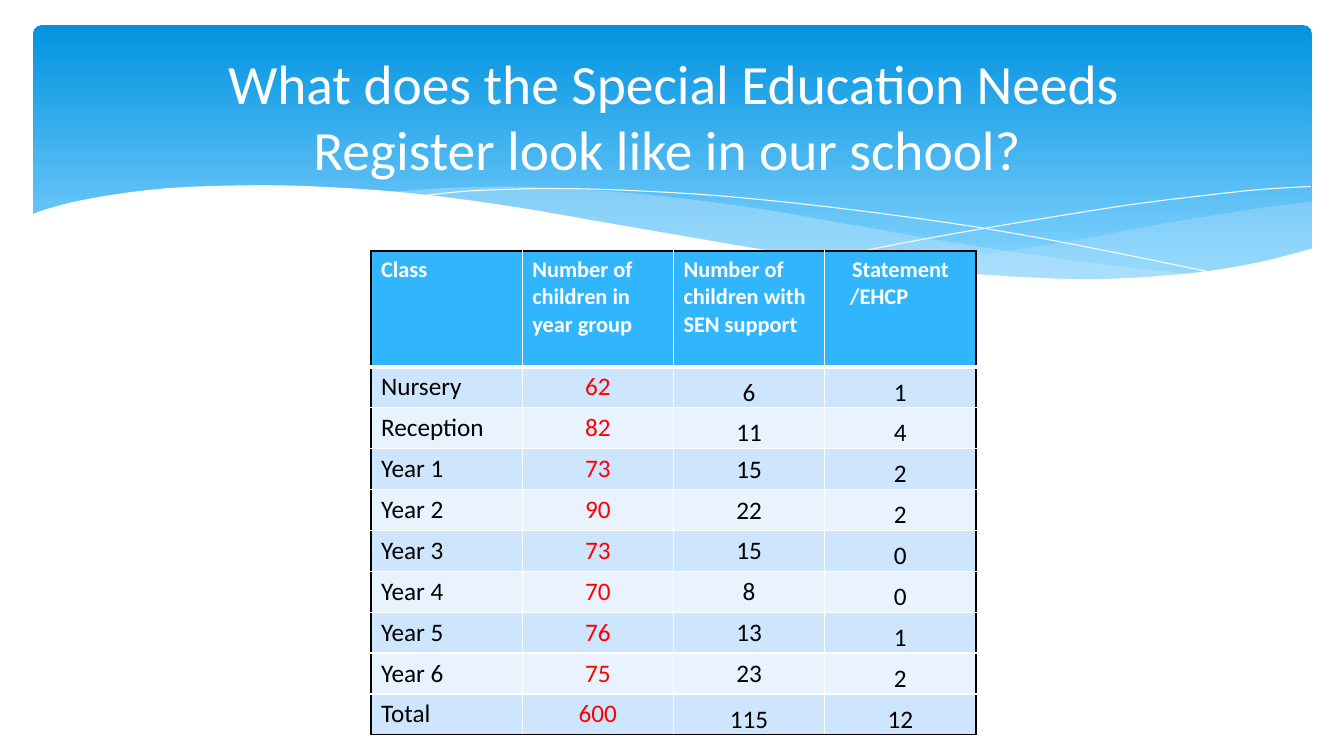
from lxml.etree import SubElement
from pptx import Presentation
from pptx.dml.color import RGBColor
from pptx.enum.shapes import MSO_SHAPE as Preset
from pptx.enum.text import MSO_ANCHOR as Anchor, MSO_AUTO_SIZE as AutoSize, PP_ALIGN as Align
from pptx.oxml.ns import qn
from pptx.util import Pt

PX = 9144
FONT = "Calibri"
WHITE, BLACK, RED = "FFFFFF", "000000", "FF0000"
HEADER_BLUE, MIST = "31B6FD", "C6E7FC"
BANDS = ["CEE5FE", "E8F3FF"]

TITLE = "What does the Special Education Needs Register look like in our school? "
HEADINGS = ["Class", "Number of children in year group\t",
            "Number of children with SEN support\t", "Statement /EHCP\t"]
CLASSES = [
    ("Nursery", 62, 6, 1),
    ("Reception", 82, 11, 4),
    ("Year 1", 73, 15, 2),
    ("Year 2", 90, 22, 2),
    ("Year 3", 73, 15, 0),
    ("Year 4", 70, 8, 0),
    ("Year 5", 76, 13, 1),
    ("Year 6", 75, 23, 2),
    ("Total", 600, 115, 12),
]

RIGHT_RIPPLE = [
    [(1268, 175), (1213, 182), (1155, 191), (1114, 198), (1040, 212), (972, 223),
     (908, 232), (849, 240)],
    [(849, 240), (907, 246), (960, 250), (1038, 253), (1105, 251), (1163, 245),
     (1214, 237), (1268, 222)],
]
LONG_RIPPLE = [
    [(1157, 248), (1083, 240), (1001, 229), (908, 215), (806, 197), (726, 183),
     (653, 173), (586, 166), (527, 162), (473, 160), (426, 161), (385, 163), (349, 166)],
    [(349, 166), (423, 174), (506, 186), (566, 197), (673, 215), (769, 230), (854, 241),
     (930, 249), (997, 252), (1057, 253), (1110, 252), (1157, 248)],
]
FALLING_LINE = [
    [(379, 170), (425, 165), (466, 163), (522, 162), (592, 164), (677, 169), (778, 179),
     (894, 194), (981, 208), (1075, 226), (1177, 247)],
]
RISING_LINE = [
    [(785, 232), (863, 216), (964, 198), (1082, 179), (1161, 169), (1217, 163), (1267, 160)],
]
FRONT_WAVE = [
    [(1270, 221), (1221, 234), (1165, 244), (1101, 250), (1045, 252), (982, 250),
     (911, 245), (830, 237), (739, 225), (638, 208), (563, 195), (488, 182), (420, 172),
     (357, 165), (300, 161), (249, 159), (202, 159), (143, 161), (94, 166), (46, 174),
     (15, 182), (-2, 188)],
    [(-2, 304), (1270, 304)],
]


def rgb(code):
    """Turn a hex string into a colour."""
    return RGBColor.from_string(code)


def emu(*lengths):
    """Turn lengths in px into EMU."""
    return [round(length * PX) for length in lengths]


def apply(target, values):
    """Set each named attribute of the target."""
    for name, value in values.items():
        setattr(target, name, value)


def write(frame, text, align, **font):
    """Put one formatted paragraph into a text frame."""
    para = frame.paragraphs[0]
    para.alignment = align
    run = para.add_run()
    run.text = text
    run.font.color.rgb = rgb(font.pop("color"))
    apply(run.font, {"name": FONT, **font})


def smooth(points, steps=4):
    """Sample a Catmull-Rom curve through the points."""
    if len(points) < 3:
        return points
    padded = [points[0], *points, points[-1]]
    curve = [points[0]]
    for a, b, c, d in zip(padded, padded[1:], padded[2:], padded[3:]):
        for step in range(1, steps + 1):
            t = step / steps
            curve.append(tuple(
                (2 * q + (r - p) * t + (2 * p - 5 * q + 4 * r - s) * t ** 2
                 + (3 * q - p - 3 * r + s) * t ** 3) / 2
                for p, q, r, s in zip(a, b, c, d)))
    return curve


def add_curve(page, box, edges, color, opacity=100, closed=True):
    """Draw smooth edges from the corner of the box, as an area or a hairline."""
    left, top = box[:2]
    points = [emu(left + x, top + y) for edge in edges for x, y in smooth(edge)]
    builder = page.shapes.build_freeform(*points[0])
    builder.add_line_segments(points[1:], close=closed)
    shape = builder.convert_to_shape()
    shape.shadow.inherit = False
    if not closed:
        shape.fill.background()
        shape.line.color.rgb = rgb(color)
        shape.line.width = Pt(0)
        return
    shape.line.fill.background()
    shape.fill.solid()
    shape.fill.fore_color.rgb = rgb(color)
    if opacity < 100:
        tint = shape.element.spPr.find(qn("a:solidFill"))[0]
        SubElement(tint, qn("a:alpha"), val=str(opacity * 1000))


def add_banner(page, box):
    """Draw the gradient panel with its ripples and front wave."""
    panel = page.shapes.add_shape(Preset.ROUNDED_RECTANGLE, *emu(*box))
    panel.adjustments[0] = 0.03
    panel.shadow.inherit = False
    panel.line.fill.background()
    panel.fill.gradient()
    panel.fill.gradient_angle = 270
    for stop, color, position in zip(panel.fill.gradient_stops, ("0293E0", "83D3FE"), (0, 0.9)):
        stop.color.rgb = rgb(color)
        stop.position = position
    add_curve(page, box, RIGHT_RIPPLE, MIST, opacity=29)
    add_curve(page, box, LONG_RIPPLE, MIST, opacity=40)
    add_curve(page, box, FALLING_LINE, WHITE, closed=False)
    add_curve(page, box, RISING_LINE, WHITE, closed=False)
    add_curve(page, box, FRONT_WAVE, WHITE)


def add_title(page, box):
    """Place the title above the banner."""
    title = page.shapes.title
    title.element.getparent().append(title.element)
    apply(title, dict(zip(("left", "top", "width", "height"), emu(*box))))
    apply(title.text_frame, {"word_wrap": True, "auto_size": AutoSize.NONE,
                             "vertical_anchor": Anchor.MIDDLE})
    write(title.text_frame, TITLE, Align.CENTER, size=Pt(39.6), color=WHITE)


def add_borders(cell, sides):
    """Draw the cell borders, given as side, colour and points."""
    props = cell._tc.get_or_add_tcPr()
    for side, color, points in sides:
        line = SubElement(props, qn(f"a:ln{side}"), w=str(Pt(points)))
        SubElement(SubElement(line, qn("a:solidFill")), qn("a:srgbClr"), val=color)


def format_cell(cell, text, row, column):
    """Write and style one cell of the register by its place."""
    header = row == 0
    last_row, last_column = len(CLASSES), len(HEADINGS) - 1
    add_borders(cell, [
        ("L", BLACK if column == 0 else WHITE, 1),
        ("R", BLACK if column == last_column else WHITE, 1),
        ("T", BLACK if header else WHITE, 3 if row == 1 else 1),
        ("B", BLACK if row == last_row else WHITE, 3 if header else 1),
    ])
    cell.fill.solid()
    cell.fill.fore_color.rgb = rgb(HEADER_BLUE if header else BANDS[(row - 1) % 2])
    if not header and column >= 2:
        centred = column == 2 and text_is_year(row)
        edge = emu(1)[0]
        apply(cell, {"margin_left": edge, "margin_top": edge, "margin_right": edge,
                     "margin_bottom": 0,
                     "vertical_anchor": Anchor.MIDDLE if centred else Anchor.BOTTOM})
    left = column < last_column if header else column == 0
    color = WHITE if header else RED if column == 1 else BLACK
    write(cell.text_frame, str(text), Align.LEFT if left else Align.CENTER,
          size=Pt(16 if header else 18), bold=header, color=color)


def text_is_year(row):
    """Tell whether a table row is a numbered school year."""
    return CLASSES[row - 1][0].startswith("Year")


def add_register(page, box, header_height=115):
    """Build the table of classes and their counts."""
    rows = [HEADINGS, *CLASSES]
    table = page.shapes.add_table(len(rows), len(HEADINGS), *emu(*box)).table
    apply(table, {"first_row": False, "horz_banding": False})
    row_height = (box[3] - header_height) // len(CLASSES)
    for column in table.columns:
        column.width = emu(box[2] / len(HEADINGS))[0]
    for row, values in enumerate(rows):
        table.rows[row].height = emu(row_height if row else header_height)[0]
        for column, text in enumerate(values):
            format_cell(table.cell(row, column), text, row, column)


def main():
    """Build the deck and save it."""
    deck = Presentation()
    deck.slide_width, deck.slide_height = emu(1333, 750)
    page = deck.slides.add_slide(deck.slide_layouts[5])
    add_banner(page, (33, 25, 1268, 270))
    add_register(page, (368, 249, 600, 475))
    add_title(page, (167, 52, 1002, 125))
    deck.save("out.pptx")


if __name__ == "__main__":
    main()
